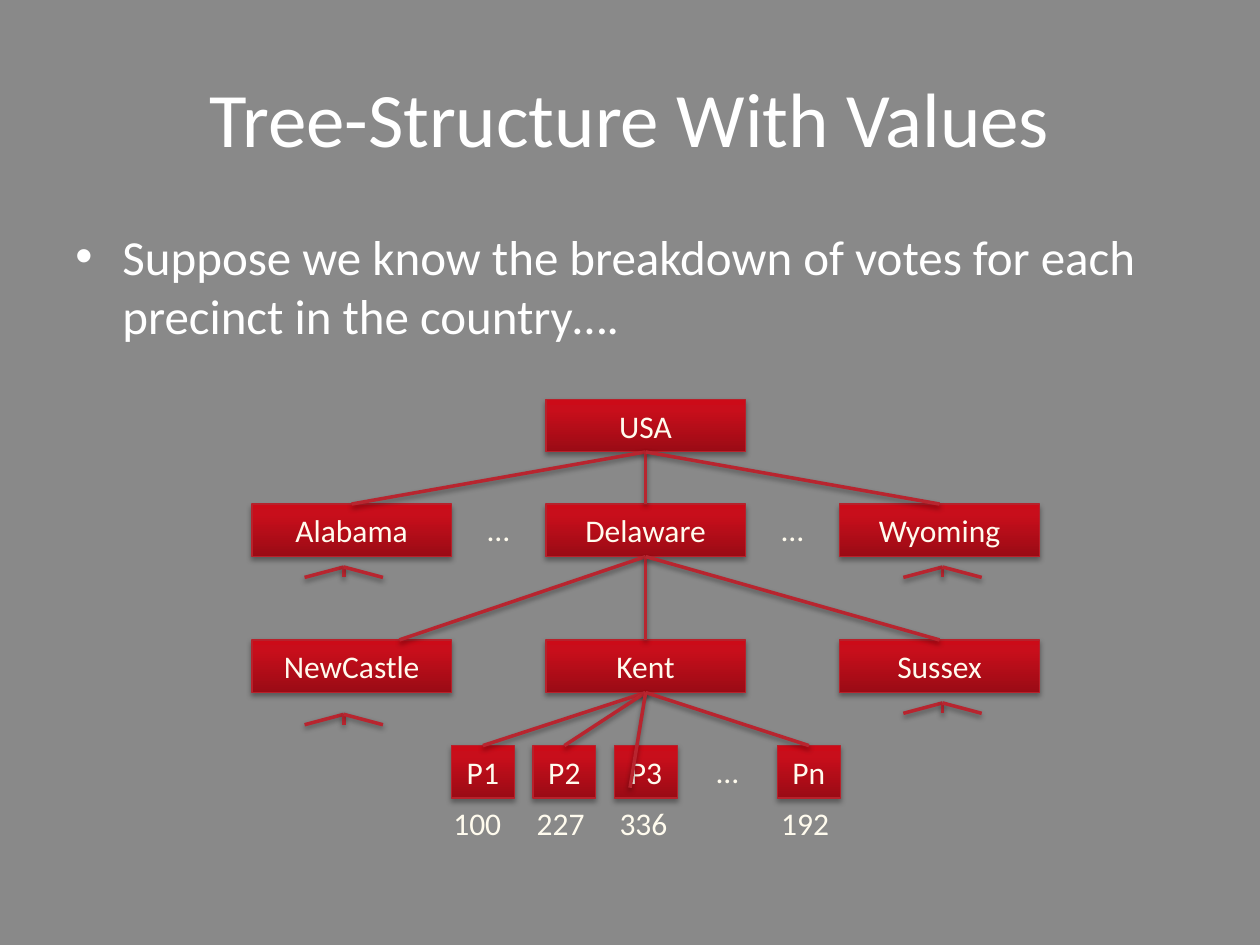
from lxml.etree import SubElement
from pptx import Presentation
from pptx.dml.color import RGBColor
from pptx.enum.shapes import MSO_CONNECTOR, MSO_SHAPE
from pptx.enum.text import MSO_ANCHOR, PP_ALIGN
from pptx.oxml import parse_xml
from pptx.oxml.ns import nsdecls, qn
from pptx.util import Cm, Pt

GREY = RGBColor(0x89, 0x89, 0x89)
WHITE = RGBColor(0xFF, 0xFF, 0xFF)
CREAM = RGBColor(0xFF, 0xFB, 0xEE)
EDGE = RGBColor(0xB8, 0x21, 0x2B)
BRANCH = RGBColor(0xB8, 0x25, 0x2F)
STOPS = [(0, RGBColor(0x9A, 0x0B, 0x15)), (80, RGBColor(0xC8, 0x0E, 0x1B)),
         (100, RGBColor(0xCC, 0x0B, 0x18))]

TITLE = {"size": Pt(44), "name": "Calibri"}
BODY = {"size": Pt(28), "name": "Calibri"}
LABEL = {"size": Pt(18), "name": "Calibri"}

NODE_W, NODE_H = 4.02, 1.06
COL_PITCH = 5.925
LEAF_X, LEAF_W, LEAF_PITCH = 4.02, 1.27, 1.643
USA_Y, STATE_Y, COUNTY_Y, LEAF_Y, VALUE_Y = 0, 2.11, 4.85, 6.98, 8.03


def write(shape, text, fmt, color, align=PP_ALIGN.CENTER, anchor=MSO_ANCHOR.MIDDLE, wrap=True):
    """Fill a shape with one formatted paragraph and return it."""
    tf = shape.text_frame
    for key, value in {"word_wrap": wrap, "vertical_anchor": anchor}.items():
        setattr(tf, key, value)
    p = tf.paragraphs[0]
    p.alignment = align
    r = p.add_run()
    r.text = text
    for key, value in fmt.items():
        setattr(r.font, key, value)
    r.font.color.rgb = color
    return p


def add_text(s, x, y, w, h, *args, **kwargs):
    """Add a text box and return its paragraph."""
    return write(s.shapes.add_textbox(Cm(x), Cm(y), Cm(w), Cm(h)), *args, **kwargs)


def add_shadow(shape, alpha, dist):
    """Give a shape or connector a soft shadow below it."""
    shape._element.spPr.append(parse_xml(
        f'<a:effectLst {nsdecls("a")}><a:outerShdw blurRad="{Pt(3.1)}" dist="{Pt(dist)}" '
        f'dir="5400000" rotWithShape="0"><a:srgbClr val="000000"><a:alpha val="{alpha * 1000}"/>'
        '</a:srgbClr></a:outerShdw></a:effectLst>'))


def add_node(s, x, y, w, text):
    """Add one labelled red tree node."""
    sp = s.shapes.add_shape(MSO_SHAPE.RECTANGLE, Cm(x), Cm(y), Cm(w), Cm(NODE_H))
    stops = "".join(f'<a:gs pos="{pos * 1000}"><a:srgbClr val="{color}"/></a:gs>'
                    for pos, color in STOPS)
    sp.line.color.rgb = EDGE
    sp.line.width = Pt(0.75)
    sp._element.spPr.find(qn("a:ln")).addprevious(parse_xml(
        f'<a:gradFill {nsdecls("a")} rotWithShape="1"><a:gsLst>{stops}</a:gsLst>'
        '<a:lin ang="16200000" scaled="0"/></a:gradFill>'))
    add_shadow(sp, 35, 1.8)
    write(sp, text, LABEL, CREAM)


def add_branches(s, x, y, ends):
    """Draw lines from one point to each end."""
    for end_x, end_y in ends:
        line = s.shapes.add_connector(MSO_CONNECTOR.STRAIGHT, Cm(x), Cm(y), Cm(end_x), Cm(end_y))
        line.line.color.rgb = BRANCH
        line.line.width = Pt(2)
        add_shadow(line, 38, 1.6)


def add_tuft(s, x, y):
    """Draw three short branches that stand for a hidden subtree."""
    add_branches(s, x, y, [(x + dx, y + 0.21) for dx in (-0.79, 0, 0.79)])


def add_ellipsis(s, center, y):
    """Add an ellipsis centred between two nodes."""
    add_text(s, center - 0.48, y, 0.96, 1.02, "…", LABEL, CREAM,
             anchor=MSO_ANCHOR.TOP, wrap=False)


def add_heading(s, x, y, w):
    """Place the title and the bullet below it."""
    add_text(s, x, y, w, 3.18, "Tree-Structure With Values", TITLE, WHITE)
    p = add_text(s, x, y + 3.68, w, 2.97,
                 "Suppose we know the breakdown of votes for each precinct in the country….",
                 BODY, WHITE, PP_ALIGN.LEFT, MSO_ANCHOR.TOP)
    pPr = p._p.get_or_add_pPr()
    pPr.set("marL", str(Cm(0.95)))
    pPr.set("indent", str(-Cm(0.95)))
    SubElement(pPr, qn("a:buFont"), typeface="Arial")
    SubElement(pPr, qn("a:buChar"), char="•")


def add_upper_tree(s, x, y):
    """Place the country, state and county levels."""
    lefts = [x + i * COL_PITCH for i in range(3)]
    centers = [left + NODE_W / 2 for left in lefts]
    add_node(s, lefts[1], y + USA_Y, NODE_W, "USA")
    for row_y, names in ((STATE_Y, ("Alabama", "Delaware", "Wyoming")),
                         (COUNTY_Y, ("NewCastle", "Kent", "Sussex"))):
        for left, name in zip(lefts, names):
            add_node(s, left, y + row_y, NODE_W, name)
    for left in lefts[1:]:
        add_ellipsis(s, left - (COL_PITCH - NODE_W) / 2, y + STATE_Y)
    add_branches(s, centers[1], y + USA_Y + NODE_H, [(c, y + STATE_Y) for c in centers])
    add_branches(s, centers[1], y + STATE_Y + NODE_H,
                 [(c, y + COUNTY_Y) for c in (x + 2.97, *centers[1:])])
    for dx, dy in ((1.85, 3.38), (13.92, 3.38), (13.92, 6.12), (1.85, 6.35)):
        add_tuft(s, x + dx, y + dy)


def add_precincts(s, x, y):
    """Place the precinct level with its vote counts."""
    lefts = [x + LEAF_X + i * LEAF_PITCH for i in range(5)]
    centers = [left + LEAF_W / 2 for left in lefts]
    for i, name in ((0, "P1"), (1, "P2"), (2, "P3"), (4, "Pn")):
        add_node(s, lefts[i], y + LEAF_Y, LEAF_W, name)
    add_ellipsis(s, centers[3], y + LEAF_Y)
    ends = [(centers[i], y + LEAF_Y) for i in (0, 1, 4)] + [(x + 7.62, y + 7.83)]
    add_branches(s, x + COL_PITCH + NODE_W / 2, y + COUNTY_Y + NODE_H, ends)
    p = add_text(s, x + 3.81, y + VALUE_Y, 8.33, 1.02, "100\t227\t336\t192", LABEL, CREAM,
                 PP_ALIGN.LEFT, MSO_ANCHOR.TOP)
    tabs = SubElement(p._p.get_or_add_pPr(), qn("a:tabLst"))
    for pos in (1.68, 3.35, 6.61):
        SubElement(tabs, qn("a:tab"), pos=str(Cm(pos)), algn="l")


def main():
    """Build and save the slide."""
    prs = Presentation()
    prs.slide_width, prs.slide_height = Cm(25.4), Cm(19.05)
    s = prs.slides.add_slide(prs.slide_layouts[6])
    s.background.fill.solid()
    s.background.fill.fore_color.rgb = GREY
    add_heading(s, 1.27, 0.76, 22.86)
    add_upper_tree(s, 5.08, 8.05)
    add_precincts(s, 5.08, 8.05)
    prs.save("out.pptx")


if __name__ == "__main__":
    main()
